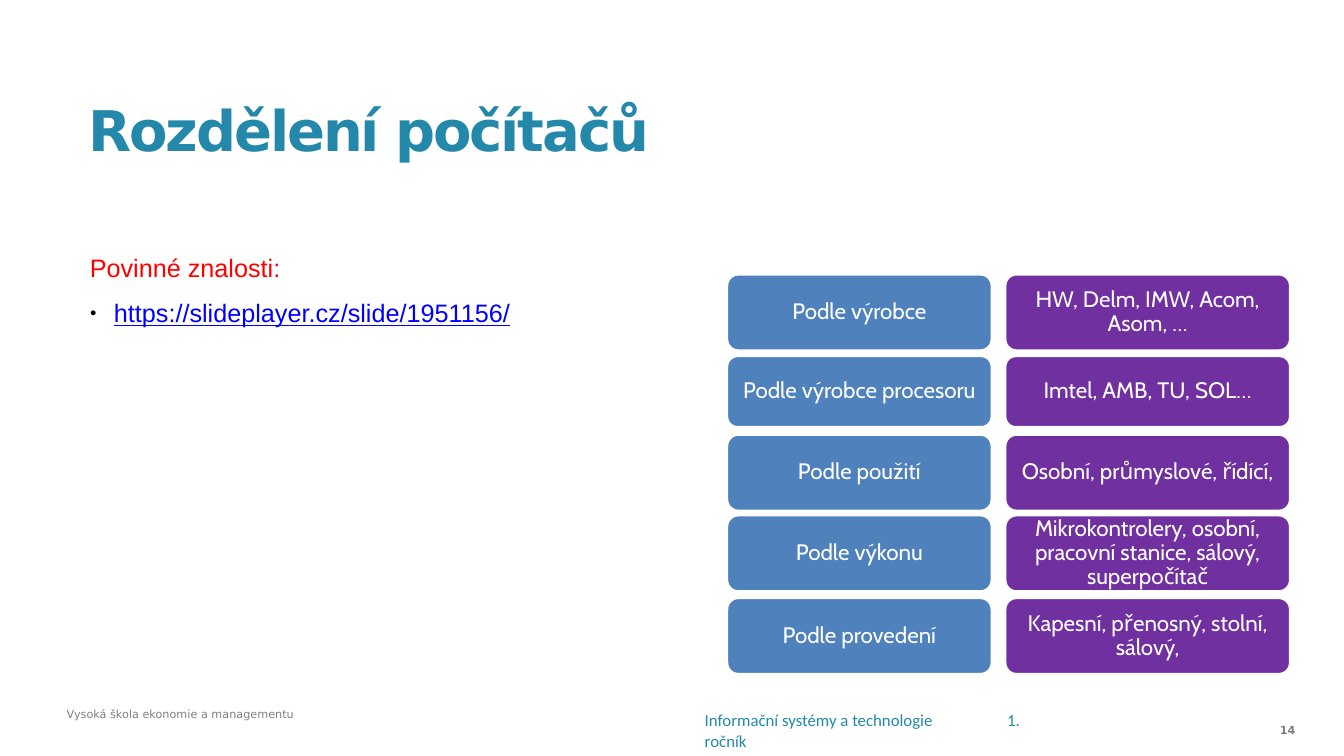
from lxml import etree
from pptx import Presentation
from pptx.dml.color import RGBColor
from pptx.enum.shapes import MSO_SHAPE
from pptx.enum.text import MSO_ANCHOR, MSO_AUTO_SIZE, PP_ALIGN
from pptx.oxml.ns import qn
from pptx.util import Inches, Pt

ROUNDED = MSO_SHAPE.ROUNDED_RECTANGLE
TOP, MIDDLE = MSO_ANCHOR.TOP, MSO_ANCHOR.MIDDLE
LEFT, CENTER, RIGHT = PP_ALIGN.LEFT, PP_ALIGN.CENTER, PP_ALIGN.RIGHT
FIXED = MSO_AUTO_SIZE.NONE

TEAL, GRAY, RED, LINK = "2388A9", "808080", "FF0000", "0000FF"
BLUE, PURPLE, WHITE, BLACK = "4F81BD", "7030A0", "FFFFFF", "000000"
HEADING_FONT, BODY_FONT, BOX_FONT, FOOTER_FONT = "DejaVu Sans", "Arial", "Cabin", "Calibri"

CRITERION_COLUMN = (54.08, 19.73)
EXAMPLE_COLUMN = (74.78, 21.23)
CLASSIFICATION = [
    (36.27, 10.13, "Podle výrobce", "HW, Delm, IMW, Acom, Asom, …"),
    (47.07, 9.47, "Podle výrobce procesoru", "Imtel, AMB, TU, SOL…"),
    (57.47, 10.13, "Podle použití", "Osobní, průmyslové, řídící,"),
    (68.13, 10.13, "Podle výkonu",
     "Mikrokontrolery, osobní, pracovní stanice, sálový, superpočítač"),
    (79.07, 10.13, "Podle provedení", "Kapesní, přenosný, stolní, sálový,"),
]


def color(value):
    return RGBColor.from_string(value)


class SlideBuilder:
    def __init__(self, deck):
        self.width, self.height = deck.slide_width, deck.slide_height
        self.slide = deck.slides.add_slide(deck.slide_layouts[1])

    def across(self, percent):
        return round(self.width * percent / 100)

    def down(self, percent):
        return round(self.height * percent / 100)

    def area(self, left, top, width, height):
        return self.across(left), self.down(top), self.across(width), self.down(height)

    def place(self, placeholder, area):
        placeholder.left, placeholder.top, placeholder.width, placeholder.height = self.area(*area)

    def frame(self, holder, anchor, side=0.75, edge=0.67, wrap=True):
        frame = holder.text_frame
        frame.auto_size = FIXED
        frame.word_wrap = wrap
        frame.vertical_anchor = anchor
        frame.margin_left = frame.margin_right = self.across(side)
        frame.margin_top = frame.margin_bottom = self.down(edge)
        return frame

    def add_text(self, paragraph, text, size, font, tint, bold=False, align=LEFT, spacing=1.0):
        paragraph.alignment = align
        paragraph.line_spacing = spacing
        paragraph.space_before = Pt(0)
        run = paragraph.add_run()
        run.text = text
        run.font.size = Pt(size)
        run.font.name = font
        run.font.bold = bold
        run.font.color.rgb = color(tint)
        return run

    def title(self, text, area):
        heading = self.slide.shapes.title
        self.place(heading, area)
        paragraph = self.frame(heading, MIDDLE, 0, 0).paragraphs[0]
        run = self.add_text(paragraph, text, 40, HEADING_FONT, TEAL, bold=True, spacing=0.9)
        run._r.get_or_add_rPr().set("spc", "-150")

    def bullet(self, paragraph):
        indent = self.across(1.8)
        properties = paragraph._p.get_or_add_pPr()
        properties.set("marL", str(indent))
        properties.set("indent", str(-indent))
        tint = etree.SubElement(properties, qn("a:buClr"))
        etree.SubElement(tint, qn("a:srgbClr"), val=BLACK)
        etree.SubElement(properties, qn("a:buSzPct"), val="45000")
        etree.SubElement(properties, qn("a:buFont"), typeface=BODY_FONT)
        etree.SubElement(properties, qn("a:buChar"), char="●")

    def reading(self, lead, address, area):
        body = self.slide.placeholders[1]
        self.place(body, area)
        frame = self.frame(body, TOP)
        lead_line = frame.paragraphs[0]
        properties = lead_line._p.get_or_add_pPr()
        properties.set("marL", "0")
        properties.set("indent", "0")
        etree.SubElement(properties, qn("a:buNone"))
        self.add_text(lead_line, lead, 18, BODY_FONT, RED, spacing=1.5)
        address_line = frame.add_paragraph()
        self.bullet(address_line)
        source = self.add_text(address_line, address, 18, BODY_FONT, LINK, spacing=1.5)
        source.font.underline = True

    def label(self, text, area, size, font, tint, anchor=MIDDLE, wrap=True, tab=None, **style):
        holder = self.slide.shapes.add_textbox(*self.area(*area))
        paragraph = self.frame(holder, anchor, wrap=wrap).paragraphs[0]
        if tab:
            stops = etree.SubElement(paragraph._p.get_or_add_pPr(), qn("a:tabLst"))
            etree.SubElement(stops, qn("a:tab"), pos=str(self.across(tab)), algn="l")
        self.add_text(paragraph, text, size, font, tint, **style)

    def box(self, text, area, fill):
        card = self.slide.shapes.add_shape(ROUNDED, *self.area(*area))
        card.adjustments[0] = 0.15
        card.shadow.inherit = False
        card.fill.solid()
        card.fill.fore_color.rgb = color(fill)
        card.line.color.rgb = color(WHITE)
        card.line.width = Pt(2)
        paragraph = self.frame(card, MIDDLE, 0.82, 0.93).paragraphs[0]
        self.add_text(paragraph, text, 16, BOX_FONT, WHITE, align=CENTER, spacing=0.9)


def main():
    deck = Presentation()
    deck.slide_width, deck.slide_height = Inches(13.33), Inches(7.5)
    page = SlideBuilder(deck)
    page.title("Rozdělení počítačů", (6.6, 15.2, 92.35, 4.8))
    page.reading("Povinné znalosti:", "https://slideplayer.cz/slide/1951156/",
                 (5.93, 30.67, 90.1, 34.8))
    page.label("Informační systémy a technologie\t1. ročník", (51.69, 94.53, 26.18, 4.13),
               12, FOOTER_FONT, TEAL, tab=22.5)
    page.label("14", (90.85, 94.53, 6.3, 4.13), 8, HEADING_FONT, GRAY, bold=True, align=RIGHT)
    page.label("Vysoká škola ekonomie a managementu", (4.2, 92.93, 18.45, 3.07),
               8, HEADING_FONT, GRAY, anchor=TOP, wrap=False, align=RIGHT)
    for top, height, criterion, examples in CLASSIFICATION:
        for (left, width), text, fill in (
            (CRITERION_COLUMN, criterion, BLUE),
            (EXAMPLE_COLUMN, examples, PURPLE),
        ):
            page.box(text, (left, top, width, height), fill)
    deck.save("out.pptx")


if __name__ == "__main__":
    main()
